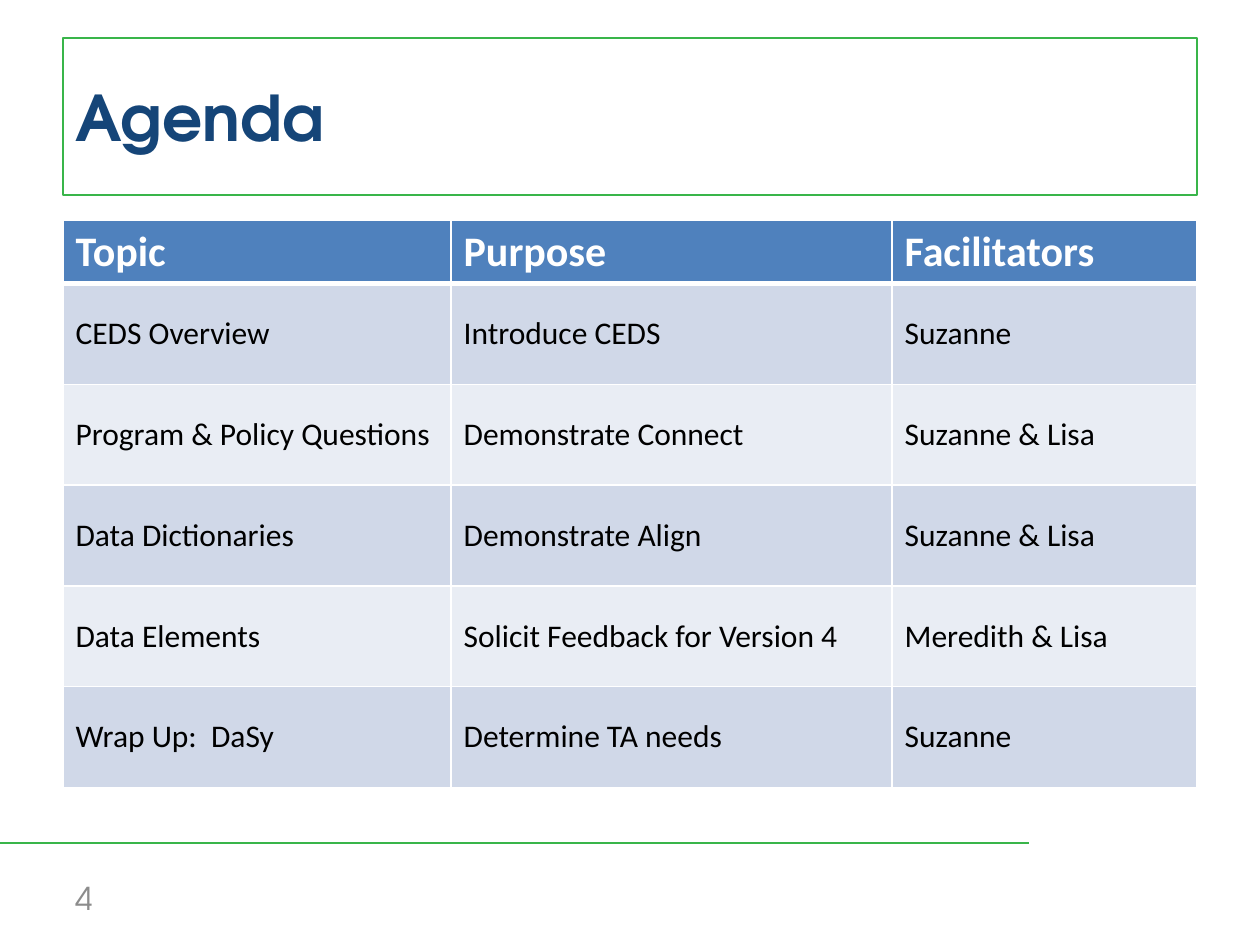
from dataclasses import dataclass

from lxml import etree
from pptx import Presentation
from pptx.dml import color
from pptx.enum import shapes, text
from pptx.oxml import ns
from pptx.util import Pt


@dataclass(frozen=True)
class Theme:
    heading_font: str = "TeX Gyre Adventor"
    body_font: str = "Calibri"
    title_size: int = 36
    header_size: int = 24
    body_size: int = 18
    navy: str = "154578"
    green: str = "39B54A"
    gray: str = "8C8C8C"
    header_fill: str = "4F81BD"
    band_fills: tuple = ("D0D8E8", "E9EDF4")
    white: str = "FFFFFF"
    black: str = "000000"


AGENDA = [
    ("Topic", "Purpose", "Facilitators"),
    ("CEDS Overview", "Introduce CEDS", "Suzanne"),
    ("Program & Policy Questions", "Demonstrate Connect", "Suzanne & Lisa"),
    ("Data Dictionaries", "Demonstrate Align", "Suzanne & Lisa"),
    ("Data Elements", "Solicit Feedback for Version 4", "Meredith & Lisa"),
    ("Wrap Up:  DaSy", "Determine TA needs", "Suzanne"),
]
LEFT, WIDTH = 36, 648
COLUMN_WIDTHS = (221.76, 252, 174.24)
HEADER_HEIGHT, ROW_HEIGHT = 36, 57.6


def rgb(value):
    return color.RGBColor.from_string(value)


class SlideBuilder:
    def __init__(self, slide, theme):
        self.slide = slide
        self.theme = theme

    def set_text(self, frame, wording, font_color, **font_format):
        frame.text = wording
        paragraph = frame.paragraphs[0]
        paragraph.alignment = text.PP_ALIGN.LEFT
        font = paragraph.runs[0].font
        for name, value in font_format.items():
            setattr(font, name, value)
        font.color.rgb = rgb(font_color)

    def place(self, shape, left, top, width, height):
        box = {"left": left, "top": top, "width": width, "height": height}
        for name, value in box.items():
            setattr(shape, name, Pt(value))

    def title(self, wording, *box):
        shape = self.slide.shapes.title
        self.place(shape, *box)
        shape.line.color.rgb = rgb(self.theme.green)
        shape.line.width = Pt(1)
        shape.text_frame.vertical_anchor = text.MSO_ANCHOR.MIDDLE
        self.set_text(shape.text_frame, wording, self.theme.navy, bold=True,
                      name=self.theme.heading_font,
                      size=Pt(self.theme.title_size))

    def rule(self, top, length):
        line = self.slide.shapes.add_connector(
            shapes.MSO_CONNECTOR.STRAIGHT, 0, Pt(top), Pt(length), Pt(top))
        line.line.color.rgb = rgb(self.theme.green)
        line.line.width = Pt(1.5)
        etree.SubElement(line._element.spPr, ns.qn("a:effectLst"))

    def page_number(self, number, *box):
        shape = self.slide.shapes.add_textbox(*map(Pt, box))
        shape.text_frame.word_wrap = True
        shape.text_frame.vertical_anchor = text.MSO_ANCHOR.MIDDLE
        self.set_text(shape.text_frame, number, self.theme.gray,
                      name=self.theme.heading_font,
                      size=Pt(self.theme.body_size))

    def cell_borders(self, cell, widths):
        """Draw white borders; widths maps the sides L, R, T and B to points."""
        properties = cell._tc.get_or_add_tcPr()
        for side, width in widths.items():
            border = etree.SubElement(
                properties, ns.qn(f"a:ln{side}"), w=str(Pt(width)))
            fill = etree.SubElement(border, ns.qn("a:solidFill"))
            etree.SubElement(fill, ns.qn("a:srgbClr"), val=self.theme.white)

    def cell(self, cell, wording, row):
        theme = self.theme
        header = row == 0
        self.cell_borders(cell, {"L": 1, "R": 1, "T": 3 if row == 1 else 1,
                                 "B": 3 if header else 1})
        cell.fill.solid()
        cell.fill.fore_color.rgb = rgb(
            theme.header_fill if header else theme.band_fills[(row - 1) % 2])
        cell.vertical_anchor = (
            text.MSO_ANCHOR.TOP if header else text.MSO_ANCHOR.MIDDLE)
        self.set_text(cell.text_frame, wording,
                      theme.white if header else theme.black,
                      name=theme.body_font, bold=header,
                      size=Pt(theme.header_size if header
                              else theme.body_size))

    def table(self, rows, left, top):
        heights = [HEADER_HEIGHT] + [ROW_HEIGHT] * (len(rows) - 1)
        table = self.slide.shapes.add_table(
            len(rows), len(COLUMN_WIDTHS), Pt(left), Pt(top),
            Pt(sum(COLUMN_WIDTHS)), Pt(sum(heights))).table
        for column, width in zip(table.columns, COLUMN_WIDTHS):
            column.width = Pt(width)
        for index, (wordings, height) in enumerate(zip(rows, heights)):
            table.rows[index].height = Pt(height)
            for cell, wording in zip(table.rows[index].cells, wordings):
                self.cell(cell, wording, index)


def main():
    presentation = Presentation()
    presentation.slide_width, presentation.slide_height = Pt(720), Pt(540)
    title_only = presentation.slide_layouts[5]
    builder = SlideBuilder(presentation.slides.add_slide(title_only), Theme())
    builder.rule(481.7, 588)
    builder.page_number("4", LEFT, 498.5, 168, 28.75)
    builder.table(AGENDA, LEFT, 126)
    builder.title("Agenda", LEFT, 21.6, WIDTH, 90)
    presentation.save("out.pptx")


if __name__ == "__main__":
    main()
